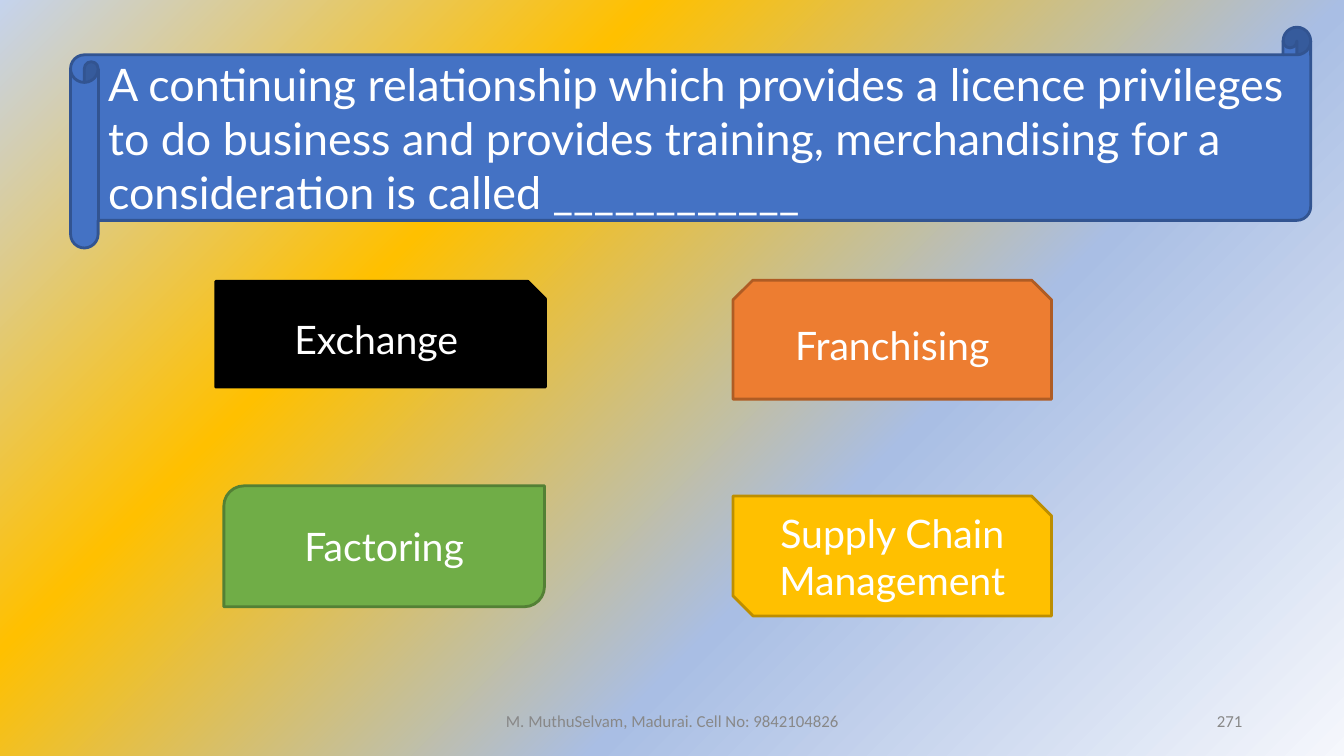
from pptx import Presentation
from pptx.dml.color import RGBColor
from pptx.enum.shapes import MSO_SHAPE
from pptx.enum.text import MSO_ANCHOR, PP_ALIGN
from pptx.oxml import parse_xml
from pptx.oxml.ns import nsdecls, qn
from pptx.util import Inches, Pt

LEFT, CENTER, RIGHT = PP_ALIGN.LEFT, PP_ALIGN.CENTER, PP_ALIGN.RIGHT
MIDDLE = MSO_ANCHOR.MIDDLE

COLORS = {
    "white": "FFFFFF", "grey": "888888", "black": "000000",
    "blue": "4472C4", "blue edge": "325491",
    "orange": "ED7D31", "orange edge": "AF5C24",
    "gold": "FFC000", "gold edge": "BD8E00",
    "green": "70AD47", "green edge": "538035",
    "mist": "F5F7FC", "sky": "A9BEE4", "haze": "C5D3ED",
}
BACKGROUND = [(0, "mist"), (36, "sky"), (69, "gold"), (100, "haze")]

QUESTION = ("A continuing relationship which provides a licence privileges to do business "
            "and provides training, merchandising for a consideration is called ____________")

# text, preset, (left, top, width, height), fill, edge, size, alignment
PANELS = [
    (QUESTION, MSO_SHAPE.HORIZONTAL_SCROLL, (0.7, 0.27, 12.3, 2.19),
     "blue", "blue edge", 32, LEFT),
    ("Exchange", MSO_SHAPE.SNIP_1_RECTANGLE, (2.14, 2.79, 3.27, 1.05),
     "black", "black", 28, CENTER),
    ("Franchising", MSO_SHAPE.SNIP_2_SAME_RECTANGLE, (7.27, 2.78, 3.16, 1.18),
     "orange", "orange edge", 28, CENTER),
    ("Supply Chain Management", MSO_SHAPE.SNIP_2_DIAG_RECTANGLE, (7.27, 4.92, 3.16, 1.19),
     "gold", "gold edge", 28, CENTER),
    ("Factoring", MSO_SHAPE.ROUND_2_DIAG_RECTANGLE, (2.22, 4.82, 3.18, 1.2),
     "green", "green edge", 28, CENTER),
]
# text, left, width, alignment
FOOTERS = [
    ("M. MuthuSelvam, Madurai. Cell No: 9842104826", 4.42, 4.5, CENTER),
    ("271", 9.42, 3, RIGHT),
]
FOOTER_TOP, FOOTER_HEIGHT = 6.95, 0.4


def rgb(name):
    return RGBColor.from_string(COLORS[name])


def set_background(s):
    """Radial gradient that spreads from the bottom right corner."""
    s.background.fill.gradient()
    stops = "".join(f'<a:gs pos="{pos * 1000}"><a:srgbClr val="{COLORS[name]}"/></a:gs>'
                    for pos, name in BACKGROUND)
    grad = parse_xml(
        f'<a:gradFill {nsdecls("a")} rotWithShape="1"><a:gsLst>{stops}</a:gsLst>'
        '<a:path path="circle"><a:fillToRect l="100000" t="100000"/></a:path>'
        '<a:tileRect r="-100000" b="-100000"/></a:gradFill>')
    old = next(s.element.iter(qn("a:gradFill")))
    old.getparent().replace(old, grad)


def write(sp, text, size, font, color, align):
    tf = sp.text_frame
    tf.word_wrap = True
    tf.vertical_anchor = MIDDLE
    p = tf.paragraphs[0]
    p.alignment = align
    r = p.add_run()
    r.text = text
    r.font.size = Pt(size)
    r.font.name = font
    r.font.color.rgb = rgb(color)


def main():
    prs = Presentation()
    prs.slide_width, prs.slide_height = Inches(13.33), Inches(7.5)
    s = prs.slides.add_slide(prs.slide_layouts[6])
    set_background(s)

    for text, preset, box, fill, edge, size, align in PANELS:
        sp = s.shapes.add_shape(preset, *map(Inches, box))
        sp.shadow.inherit = False
        sp.fill.solid()
        sp.fill.fore_color.rgb = rgb(fill)
        sp.line.color.rgb = rgb(edge)
        sp.line.width = Pt(2)
        write(sp, text, size, "Lato", "white", align)

    for text, left, width, align in FOOTERS:
        sp = s.shapes.add_textbox(*map(Inches, (left, FOOTER_TOP, width, FOOTER_HEIGHT)))
        write(sp, text, 12, "Calibri", "grey", align)

    prs.save("out.pptx")


if __name__ == "__main__":
    main()
